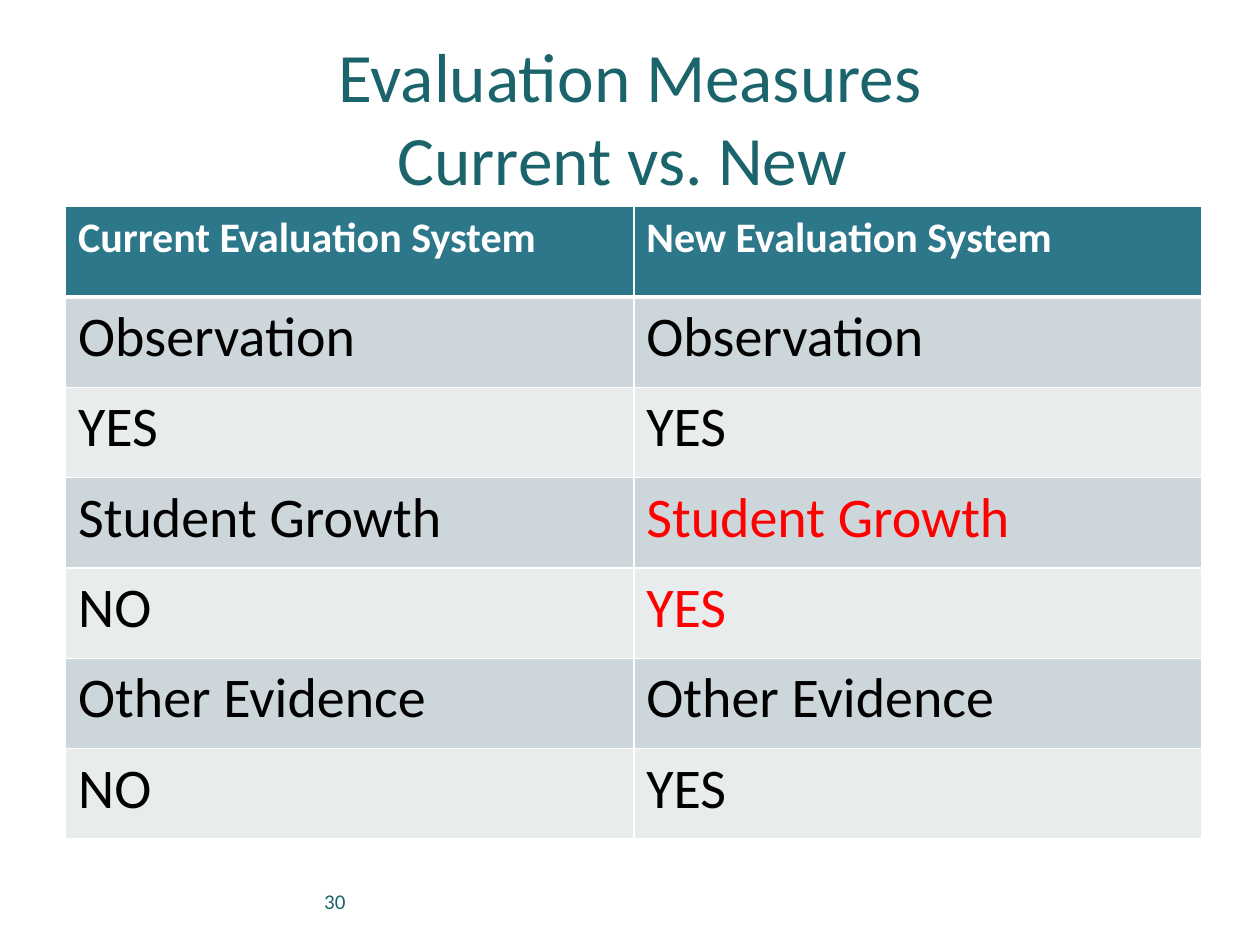
from lxml.etree import SubElement
from pptx import Presentation
from pptx.dml.color import RGBColor
from pptx.enum.text import MSO_ANCHOR, PP_ALIGN
from pptx.oxml.ns import qn
from pptx.util import Inches, Pt

COLORS = {
    "teal": "1C646B", "header": "2C778A", "odd": "CDD6DA", "even": "E8ECED",
    "white": "FFFFFF", "black": "000000", "red": "FF0000",
}
TITLE = ["Evaluation Measures", "Current vs. New "]
PAGE_NUMBER = "30"
HEADINGS = ["Current Evaluation System", "New Evaluation System"]
MEASURES = [
    ("Observation", "YES", "YES"),
    ("Student Growth", "NO", "YES"),
    ("Other Evidence", "NO", "YES"),
]
CHANGED = "Student Growth"

TABLE_LEFT, TABLE_TOP = 0.52, 1.64
COLUMN_WIDTH, ROW_HEIGHT = 4.51, 0.717

HEADER_FONT = {"size": Pt(24), "bold": True}
BODY_FONT = {"size": Pt(32), "bold": False}


def style_runs(para, color, font):
    for span in para.runs:
        span.font.name = "Calibri"
        span.font.color.rgb = RGBColor.from_string(COLORS[color])
        for name, value in font.items():
            setattr(span.font, name, value)


def add_text(page, area, lines, align, font):
    box = page.shapes.add_textbox(*(Inches(length) for length in area))
    box.text_frame.word_wrap = True
    box.text_frame.vertical_anchor = MSO_ANCHOR.MIDDLE
    para = box.text_frame.paragraphs[0]
    para.text = "\v".join(lines)
    para.alignment = align
    style_runs(para, "teal", font)


def add_borders(cell, widths):
    """Draw white borders; widths maps each side (L, R, T, B) to points."""
    properties = cell._tc.get_or_add_tcPr()
    for side, width in widths.items():
        line = SubElement(properties, qn(f"a:ln{side}"), w=str(Pt(width)))
        fill = SubElement(line, qn("a:solidFill"))
        SubElement(fill, qn("a:srgbClr"), val=COLORS["white"])


def fill_cell(cell, text, background, color, font, widths):
    add_borders(cell, widths)
    cell.fill.solid()
    cell.fill.fore_color.rgb = RGBColor.from_string(COLORS[background])
    cell.text = text
    style_runs(cell.text_frame.paragraphs[0], color, font)


def add_measures_table(page):
    rows = [HEADINGS]
    for measure, current, new in MEASURES:
        rows += [(measure, measure), (current, new)]
    columns = len(HEADINGS)
    table = page.shapes.add_table(
        len(rows), columns, Inches(TABLE_LEFT), Inches(TABLE_TOP),
        Inches(columns * COLUMN_WIDTH), Inches(len(rows) * ROW_HEIGHT),
    ).table
    changed_row = 1 + 2 * [measure[0] for measure in MEASURES].index(CHANGED)
    for r, texts in enumerate(rows):
        header = r == 0
        background = "header" if header else ("odd" if r % 2 else "even")
        widths = {"L": 1, "R": 1, "T": 3 if r == 1 else 1, "B": 3 if header else 1}
        for c, text in enumerate(texts):
            changed = c == 1 and r in (changed_row, changed_row + 1)
            color = "white" if header else ("red" if changed else "black")
            font = HEADER_FONT if header else BODY_FONT
            fill_cell(table.cell(r, c), text, background, color, font, widths)


def main():
    deck = Presentation()
    deck.slide_width, deck.slide_height = Inches(10), Inches(7.5)
    page = deck.slides.add_slide(deck.slide_layouts[6])
    add_measures_table(page)
    add_text(page, (0.67, 6.95, 2.17, 0.4), [PAGE_NUMBER], PP_ALIGN.RIGHT,
             {"size": Pt(12)})
    add_text(page, (0.5, 0.3, 9, 1.25), TITLE, PP_ALIGN.CENTER,
             {"size": Pt(39.6)})
    deck.save("out.pptx")


if __name__ == "__main__":
    main()
